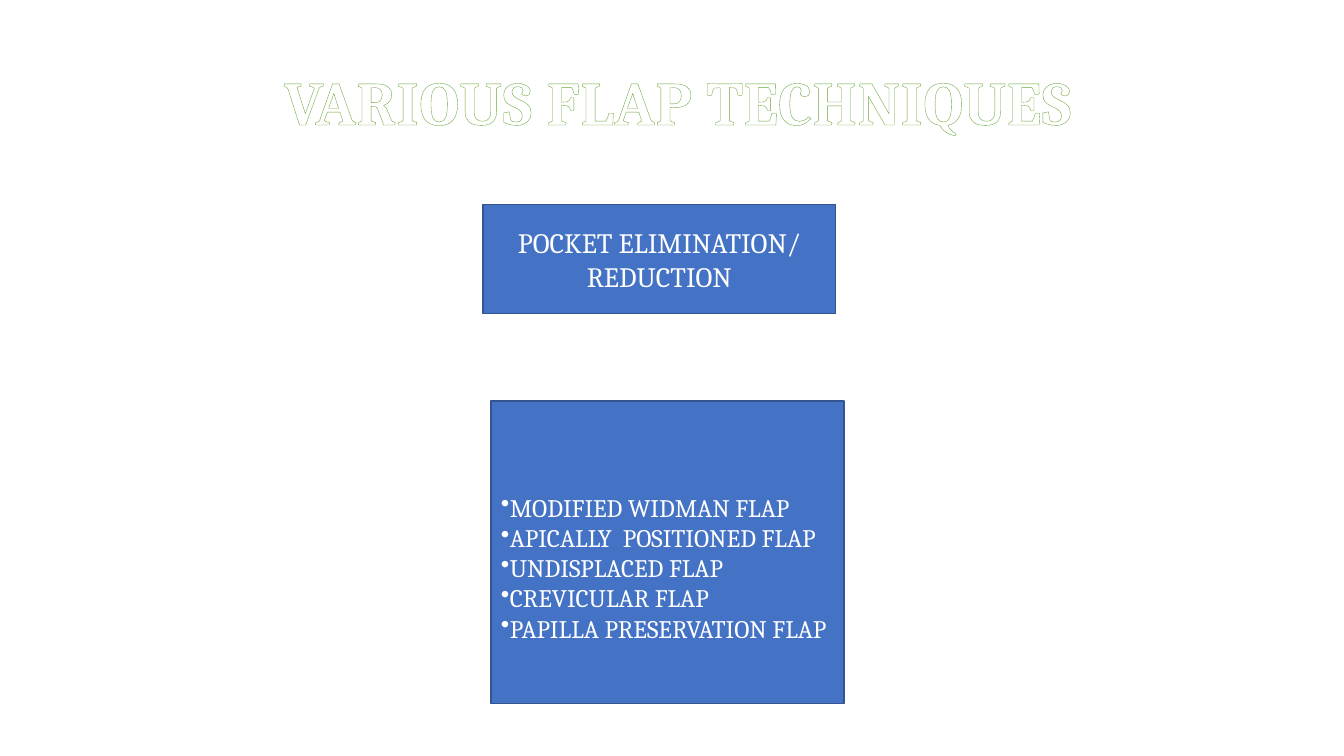
from lxml import etree
from pptx import Presentation
from pptx.dml.color import RGBColor
from pptx.enum.shapes import MSO_SHAPE
from pptx.enum.text import MSO_ANCHOR, PP_ALIGN
from pptx.oxml import parse_xml
from pptx.oxml.ns import qn
from pptx.util import Inches, Pt

TITLE = "VARIOUS FLAP TECHNIQUES"
GOAL = ["POCKET ELIMINATION/", "REDUCTION"]
FLAPS = [
    "MODIFIED WIDMAN FLAP",
    "APICALLY  POSITIONED FLAP",
    "UNDISPLACED FLAP",
    "CREVICULAR FLAP",
    "PAPILLA PRESERVATION FLAP",
]

FONT = "Cambria"
WHITE = RGBColor(0xFF, 0xFF, 0xFF)
BLUE = RGBColor(0x44, 0x72, 0xC4)
NAVY = RGBColor(0x32, 0x54, 0x91)
RECTANGLE = MSO_SHAPE.RECTANGLE
MIDDLE = MSO_ANCHOR.MIDDLE
LEFT, CENTER = PP_ALIGN.LEFT, PP_ALIGN.CENTER

DRAWING = 'xmlns:a="http://schemas.openxmlformats.org/drawingml/2006/main"'
TITLE_OUTLINE = (
    f'<a:ln {DRAWING} w="12700"><a:solidFill><a:srgbClr val="64A637"/>'
    "</a:solidFill></a:ln>"
)
TITLE_SHADOW = (
    f'<a:effectLst {DRAWING}><a:outerShdw blurRad="38100" dist="25400" dir="2700000">'
    '<a:srgbClr val="92D050"><a:alpha val="60000"/></a:srgbClr>'
    "</a:outerShdw></a:effectLst>"
)


def write_lines(frame, lines, size, align, bulleted=False):
    frame.text = "\n".join(lines)
    for para in frame.paragraphs:
        if bulleted:
            bullet = etree.SubElement(para._p.get_or_add_pPr(), qn("a:buChar"))
            bullet.set("char", "•")
        para.alignment = align
        for span in para.runs:
            span.font.name = FONT
            span.font.size = Pt(size)
            span.font.color.rgb = WHITE


def add_panel(page, place, lines, size, align, bulleted=False):
    panel = page.shapes.add_shape(RECTANGLE, *map(Inches, place))
    panel.shadow.inherit = False
    panel.fill.solid()
    panel.fill.fore_color.rgb = BLUE
    panel.line.color.rgb = NAVY
    panel.line.width = Pt(1)
    frame = panel.text_frame
    frame.word_wrap = True
    frame.vertical_anchor = MIDDLE
    write_lines(frame, lines, size, align, bulleted)
    return panel


def add_title(page):
    box = page.shapes.add_textbox(Inches(1.99), Inches(0.58), Inches(9.48), Inches(0.84))
    box.text_frame.word_wrap = False
    write_lines(box.text_frame, [TITLE], 44, CENTER)
    span = box.text_frame.paragraphs[0].runs[0]
    span.font.bold = True
    props = span.font._element
    props.set("spc", "50")
    props.insert(0, parse_xml(TITLE_OUTLINE))
    props.insert(2, parse_xml(TITLE_SHADOW))


def main():
    deck = Presentation()
    deck.slide_width, deck.slide_height = Inches(13.33), Inches(7.5)
    page = deck.slides.add_slide(deck.slide_layouts[6])
    flap_panel = add_panel(page, (4.87, 3.98, 3.5, 3), FLAPS, 18, LEFT, True)
    flap_panel.text_frame.margin_top = Inches(0.35)
    add_panel(page, (4.79, 2.03, 3.5, 1.08), GOAL, 20, CENTER)
    add_title(page)
    deck.save("out.pptx")


if __name__ == "__main__":
    main()
